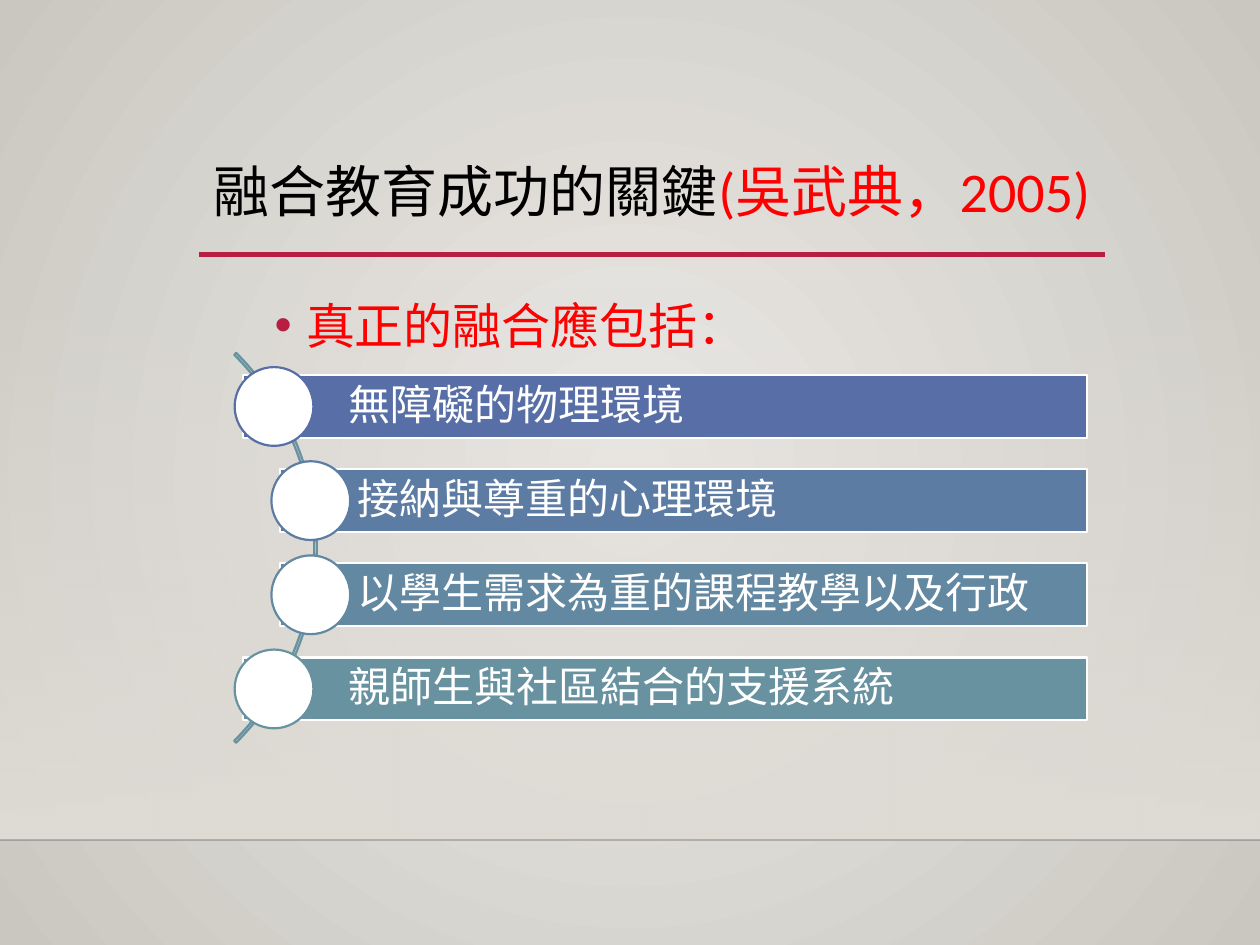
from lxml import etree
from pptx import Presentation
from pptx import util as u
from pptx.dml.color import RGBColor
from pptx.enum import shapes, text
from pptx.oxml import ns

Pt = u.Pt
FONT = "Calibri"
COLOURS = {
    "centre": "ECEAE7", "edge": "CAC7C1", "floor": "DFDBD5", "horizon": "000001",
    "accent": "B71E42", "black": "000000", "red": "FF0000", "white": "FFFFFF",
    "indigo": "586EA6", "blue": "5D7CA4", "steel": "6388A2", "teal": "6892A0",
}
ROWS = [
    ("無障礙的物理環境", "indigo", True),
    ("接納與尊重的心理環境", "blue", False),
    ("以學生需求為重的課程教學以及行政", "steel", False),
    ("親師生與社區結合的支援系統", "teal", True),
]


def rgb(name):
    """Return the named colour."""
    return RGBColor.from_string(COLOURS[name])


def add_child(parent, tag, **attributes):
    """Append a DrawingML element and return it."""
    return etree.SubElement(parent, ns.qn(tag), attributes)


def set_alpha(parent, percent):
    """Set the opacity of the first colour under an element."""
    colour = parent.find(".//" + ns.qn("a:srgbClr"))
    add_child(colour, "a:alpha", val=str(percent * 1000))


def set_stops(fill, names):
    """Give a fill a two-colour gradient."""
    fill.gradient()
    for stop, name in zip(fill.gradient_stops, names):
        stop.color.rgb = rgb(name)
    fill.gradient_stops[0].position = 0
    fill.gradient_stops[1].position = 1


def add_preset(page, kind, left, top, width, height, fill=None, line=None):
    """Add a flat preset shape with an optional fill and outline."""
    shape = page.shapes.add_shape(kind, Pt(left), Pt(top), Pt(width), Pt(height))
    shape.shadow.inherit = False
    if fill:
        shape.fill.solid()
        shape.fill.fore_color.rgb = rgb(fill)
    else:
        shape.fill.background()
    if line:
        shape.line.color.rgb = rgb(line)
        shape.line.width = Pt(1.25)
    else:
        shape.line.fill.background()
    return shape


def add_rule(page, left, top, width, colour, weight):
    """Add a flat horizontal line."""
    rule = page.shapes.add_connector(
        shapes.MSO_CONNECTOR.STRAIGHT, Pt(left), Pt(top), Pt(left + width), Pt(top))
    rule.line.color.rgb = rgb(colour)
    rule.line.width = Pt(weight)
    add_child(rule._element.spPr, "a:effectLst")
    return rule


def add_span(para, words, size, colour):
    """Add one run of text."""
    span = para.add_run()
    span.text = words
    span.font.name = FONT
    span.font.size = Pt(size)
    span.font.color.rgb = rgb(colour)


def add_text_box(page, left, top, width, height):
    """Add a wrapping text box and return its frame."""
    box = page.shapes.add_textbox(Pt(left), Pt(top), Pt(width), Pt(height))
    box.text_frame.word_wrap = True
    return box.text_frame


def draw_backdrop(page, width, height):
    """Paint the radial background, the floor fade and the horizon."""
    set_stops(page.background.fill, ("centre", "edge"))
    gradient = page._element.find(".//" + ns.qn("a:gradFill"))
    gradient.remove(gradient.find(ns.qn("a:lin")))
    radial = add_child(gradient, "a:path", path="circle")
    add_child(radial, "a:fillToRect", l="50000", t="50000", r="50000", b="50000")

    horizon_top, fade_height = height - 60, 321
    floor = add_preset(page, shapes.MSO_SHAPE.RECTANGLE,
                       0, horizon_top - fade_height, width, fade_height)
    set_stops(floor.fill, ("floor", "floor"))
    floor.fill.gradient_angle = 270
    set_alpha(floor._element.spPr, 0)
    horizon = add_rule(page, 0, horizon_top, width, "horizon", 1)
    set_alpha(horizon._element.spPr, 20)


def draw_title(page, left, top, width, height):
    """Place the centred title above its underline."""
    add_rule(page, left, top + height, width, "accent", 2.5)
    frame = add_text_box(page, left, top, width, height)
    frame.vertical_anchor = text.MSO_ANCHOR.MIDDLE
    para = frame.paragraphs[0]
    para.alignment = text.PP_ALIGN.CENTER
    para.line_spacing = 0.9
    add_span(para, "融合教育成功的關鍵", 32, "black")
    add_span(para, "(吳武典，2005)", 32, "red")


def draw_lead(page, left, top, width, height):
    """Place the bulleted lead sentence."""
    para = add_text_box(page, left, top, width, height).paragraphs[0]
    para.alignment = text.PP_ALIGN.JUSTIFY
    para.line_spacing = 1.2
    properties = para._p.get_or_add_pPr()
    properties.set("marL", str(Pt(54)))
    properties.set("indent", str(Pt(-18)))
    bullet_colour = add_child(properties, "a:buClr")
    add_child(bullet_colour, "a:srgbClr", val=COLOURS["accent"])
    add_child(properties, "a:buFont", typeface="Arial")
    add_child(properties, "a:buChar", char="•")
    add_span(para, "真正的融合應包括：", 28, "red")


def draw_arc_list(page, left, top, width, height):
    """Place the labelled bars and their circles along an arc."""
    diameter, bar_height, pitch = 315, 36, 53.8
    arc = add_preset(page, shapes.MSO_SHAPE.BLOCK_ARC, left - 267.5,
                     top + (height - diameter) / 2, diameter, diameter, line="teal")
    for index, value in enumerate((189, 27, 0.005)):
        arc.adjustments[index] = value

    first_centre = top + height / 2 - pitch * (len(ROWS) - 1) / 2
    for index, (label, colour, outer) in enumerate(ROWS):
        centre = first_centre + index * pitch
        bar_left = left + (5.5 if outer else 26.5)
        bar = add_preset(page, shapes.MSO_SHAPE.RECTANGLE, bar_left, centre - bar_height / 2,
                         left + width - bar_left, bar_height, colour, "white")
        frame = bar.text_frame
        frame.word_wrap = True
        frame.vertical_anchor = text.MSO_ANCHOR.MIDDLE
        frame.margin_left = Pt(60 if outer else 44)
        frame.margin_right = frame.margin_top = frame.margin_bottom = Pt(5)
        para = frame.paragraphs[0]
        para.alignment = text.PP_ALIGN.LEFT
        para.line_spacing = 0.9
        add_span(para, label, 24, "white")
        add_preset(page, shapes.MSO_SHAPE.OVAL, bar_left - 5, centre - 22.5,
                   45, 45, "white", colour)


def main():
    """Build and save the deck."""
    deck = Presentation()
    deck.slide_width, deck.slide_height = Pt(720), Pt(540)
    page = deck.slides.add_slide(deck.slide_layouts[6])
    draw_backdrop(page, 720, 540)
    draw_title(page, 113.8, 77, 517.6, 68.4)
    draw_lead(page, 113.8, 158.4, 517.6, 271.4)
    draw_arc_list(page, 133.6, 200, 487.4, 226)
    deck.save("out.pptx")


if __name__ == "__main__":
    main()
